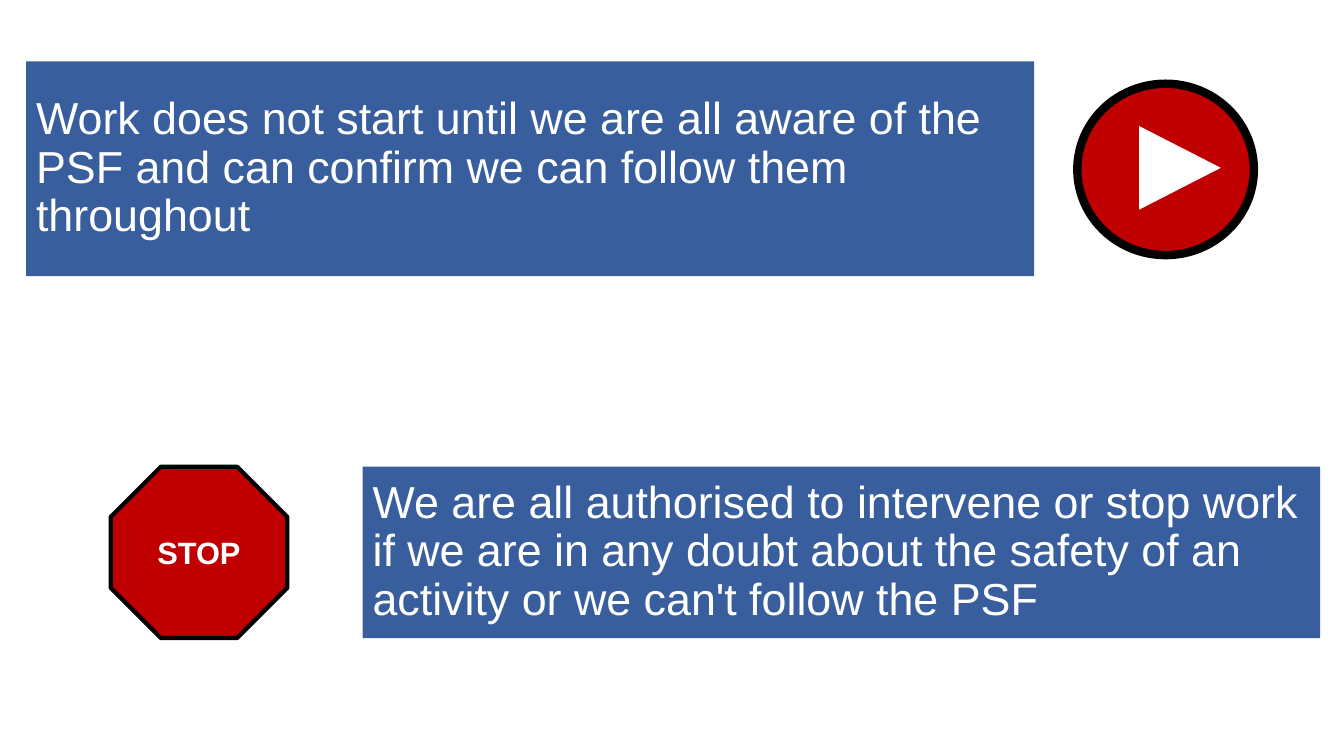
from pptx import Presentation
from pptx.dml.color import RGBColor
from pptx.enum.shapes import MSO_SHAPE
from pptx.enum.text import MSO_ANCHOR, PP_ALIGN
from pptx.util import Cm, Pt

RECT, OVAL = MSO_SHAPE.RECTANGLE, MSO_SHAPE.OVAL
TRIANGLE, OCTAGON = MSO_SHAPE.ISOSCELES_TRIANGLE, MSO_SHAPE.OCTAGON
MIDDLE, LEFT, CENTER = MSO_ANCHOR.MIDDLE, PP_ALIGN.LEFT, PP_ALIGN.CENTER

# Content: text and box (left, top, width, height) in cm
BANNERS = [
    ("Work does not start until we are all aware of the PSF "
     "and can confirm we can follow them throughout", (0.66, 1.55, 25.4, 5.41)),
    ("We are all authorised to intervene or stop work if we are in any doubt "
     "about the safety of an activity or we can't follow the PSF",
     (9.14, 11.76, 24.13, 4.32)),
]
STOP_TEXT, STOP_BOX = "STOP", (2.79, 11.76, 4.45, 4.32)
PLAY_DISC = (27.15, 2.11, 4.45, 4.32)
PLAY_ARROW = (28.68, 3.2, 2.11, 2.06)

THEME = {
    "blue": RGBColor(0x38, 0x5E, 0x9D),
    "red": RGBColor(0xC0, 0x00, 0x00),
    "white": RGBColor(0xFF, 0xFF, 0xFF),
    "black": RGBColor(0x00, 0x00, 0x00),
    "banner": {"name": "Arial", "size": Pt(32), "bold": False},
    "sign": {"name": "Arial", "size": Pt(22), "bold": True},
}
FRAME = {
    "word_wrap": True, "vertical_anchor": MIDDLE,
    "margin_left": Cm(0.25), "margin_right": Cm(0.25),
    "margin_top": Cm(0.13), "margin_bottom": Cm(0.13),
}


def set_attrs(obj, values):
    for name, value in values.items():
        setattr(obj, name, value)


def add_shape(shapes, kind, box, fill, border=0):
    sp = shapes.add_shape(kind, *map(Cm, box))
    sp.shadow.inherit = False
    sp.fill.solid()
    sp.fill.fore_color.rgb = THEME[fill]
    if border:
        sp.line.color.rgb = THEME["black"]
        sp.line.width = Pt(border)
    else:
        sp.line.fill.background()
    return sp


def add_text(sp, text, style, align, spacing):
    tf = sp.text_frame
    set_attrs(tf, FRAME)
    p = tf.paragraphs[0]
    set_attrs(p, {"alignment": align, "line_spacing": spacing})
    r = p.add_run()
    r.text = text
    set_attrs(r.font, THEME[style])
    r.font.color.rgb = THEME["white"]


prs = Presentation()
prs.slide_width, prs.slide_height = Cm(33.87), Cm(19.05)
s = prs.slides.add_slide(prs.slide_layouts[6])

# Message banners
for text, box in BANNERS:
    add_text(add_shape(s.shapes, RECT, box, "blue"), text, "banner", LEFT, 0.9)

# Play button
button = s.shapes.add_group_shape()
add_shape(button.shapes, OVAL, PLAY_DISC, "red", 6)
add_shape(button.shapes, TRIANGLE, PLAY_ARROW, "white").rotation = 90

# Stop sign
sign = add_shape(s.shapes, OCTAGON, STOP_BOX, "red", 3)
add_text(sign, STOP_TEXT, "sign", CENTER, 1.0)

prs.save("out.pptx")
